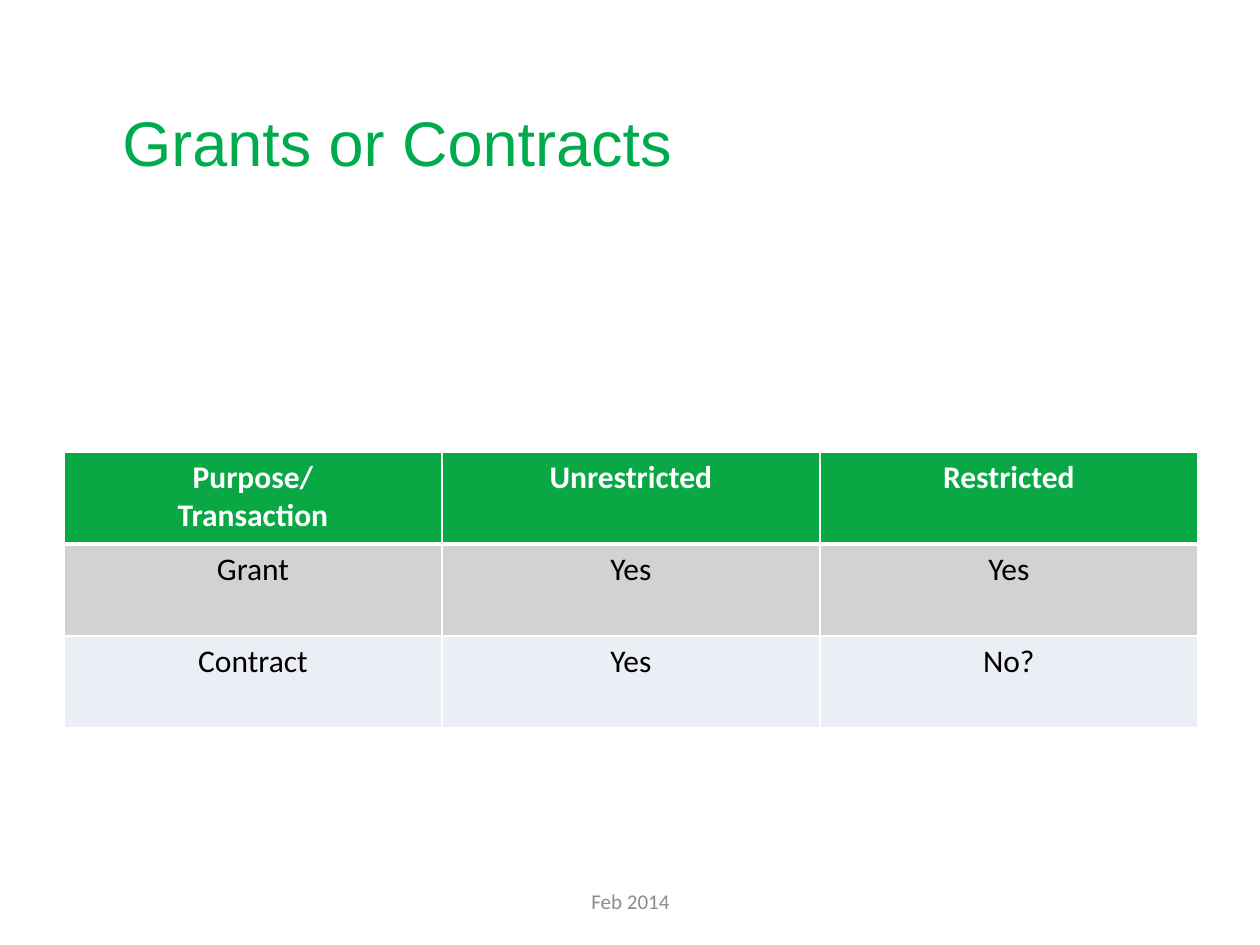
from dataclasses import dataclass

import lxml.etree
import pptx
import pptx.dml.color
import pptx.enum.text
import pptx.oxml.ns
import pptx.util

PX = 914400 // 126
COLORS = {
    "title": "00AB4E",
    "header": "0AA745",
    "grant": "A6A6A6",
    "contract": "E9EDF4",
    "white": "FFFFFF",
    "black": "000000",
    "footer": "8C8C8C",
}
ALIGN = pptx.enum.text.PP_ALIGN
qn = pptx.oxml.ns.qn


@dataclass
class Label:
    text: str
    left: int
    top: int
    width: int
    height: int
    font: str
    size: int
    color: str
    align: ALIGN


@dataclass
class Row:
    cells: tuple[str, ...]
    fill: str
    opacity: int
    color: str
    bold: bool
    top_line: int
    bottom_line: int


LABELS = [
    Label("Grants or Contracts", 110, 39, 1134, 204, "Arial", 36, "title", ALIGN.LEFT),
    Label("Feb 2014", 431, 876, 399, 50, "Calibri", 12, "footer", ALIGN.CENTER),
]
ROWS = [
    Row(("Purpose/\nTransaction", "Unrestricted", "Restricted"),
        "header", 100, "white", True, 1, 3),
    Row(("Grant", "Yes", "Yes"), "grant", 50, "black", False, 3, 1),
    Row(("Contract", "Yes", "No?"), "contract", 90, "black", False, 1, 1),
]
TABLE_LEFT, TABLE_TOP, COL_WIDTH, ROW_HEIGHT = 64, 452, 378, 92


def px(n: int) -> int:
    return pptx.util.Emu(n * PX)


def rgb(name: str) -> pptx.dml.color.RGBColor:
    return pptx.dml.color.RGBColor.from_string(COLORS[name])


def style_text(tf, font: str, size: int, color: str, align: ALIGN, bold: bool = False) -> None:
    for p in tf.paragraphs:
        p.alignment = align
        p.font.name = font
        p.font.size = pptx.util.Pt(size)
        p.font.bold = bold
        p.font.color.rgb = rgb(color)


def add_label(s, label: Label) -> None:
    sp = s.shapes.add_textbox(px(label.left), px(label.top), px(label.width), px(label.height))
    tf = sp.text_frame
    tf.word_wrap = True
    tf.vertical_anchor = pptx.enum.text.MSO_ANCHOR.MIDDLE
    tf.text = label.text
    style_text(tf, label.font, label.size, label.color, label.align)


def fill_cell(cell, color: str, opacity: int) -> None:
    cell.fill.solid()
    cell.fill.fore_color.rgb = rgb(color)
    if opacity < 100:
        clr = cell._tc.tcPr.find(f".//{qn('a:srgbClr')}")
        lxml.etree.SubElement(clr, qn("a:alpha"), val=str(opacity * 1000))


def border_cell(cell, top: int, bottom: int) -> None:
    """Add white borders ahead of the fill, as the schema requires."""
    sides = {"a:lnL": 1, "a:lnR": 1, "a:lnT": top, "a:lnB": bottom}
    for i, (tag, width) in enumerate(sides.items()):
        ln = lxml.etree.Element(qn(tag), w=str(pptx.util.Pt(width)))
        fill = lxml.etree.SubElement(ln, qn("a:solidFill"))
        lxml.etree.SubElement(fill, qn("a:srgbClr"), val=COLORS["white"])
        cell._tc.tcPr.insert(i, ln)


def add_grid(s, rows: list[Row]) -> None:
    cols = len(rows[0].cells)
    table = s.shapes.add_table(len(rows), cols, px(TABLE_LEFT), px(TABLE_TOP),
                               px(COL_WIDTH * cols), px(ROW_HEIGHT * len(rows))).table
    for i, row in enumerate(rows):
        for j, text in enumerate(row.cells):
            cell = table.cell(i, j)
            cell.text = text
            style_text(cell.text_frame, "Calibri", 18, row.color, ALIGN.CENTER, row.bold)
            fill_cell(cell, row.fill, row.opacity)
            border_cell(cell, row.top_line, row.bottom_line)


def main() -> None:
    prs = pptx.Presentation()
    prs.slide_width, prs.slide_height = px(1260), px(945)
    s = prs.slides.add_slide(prs.slide_layouts[6])
    for label in LABELS:
        add_label(s, label)
    add_grid(s, ROWS)
    prs.save("out.pptx")


if __name__ == "__main__":
    main()
